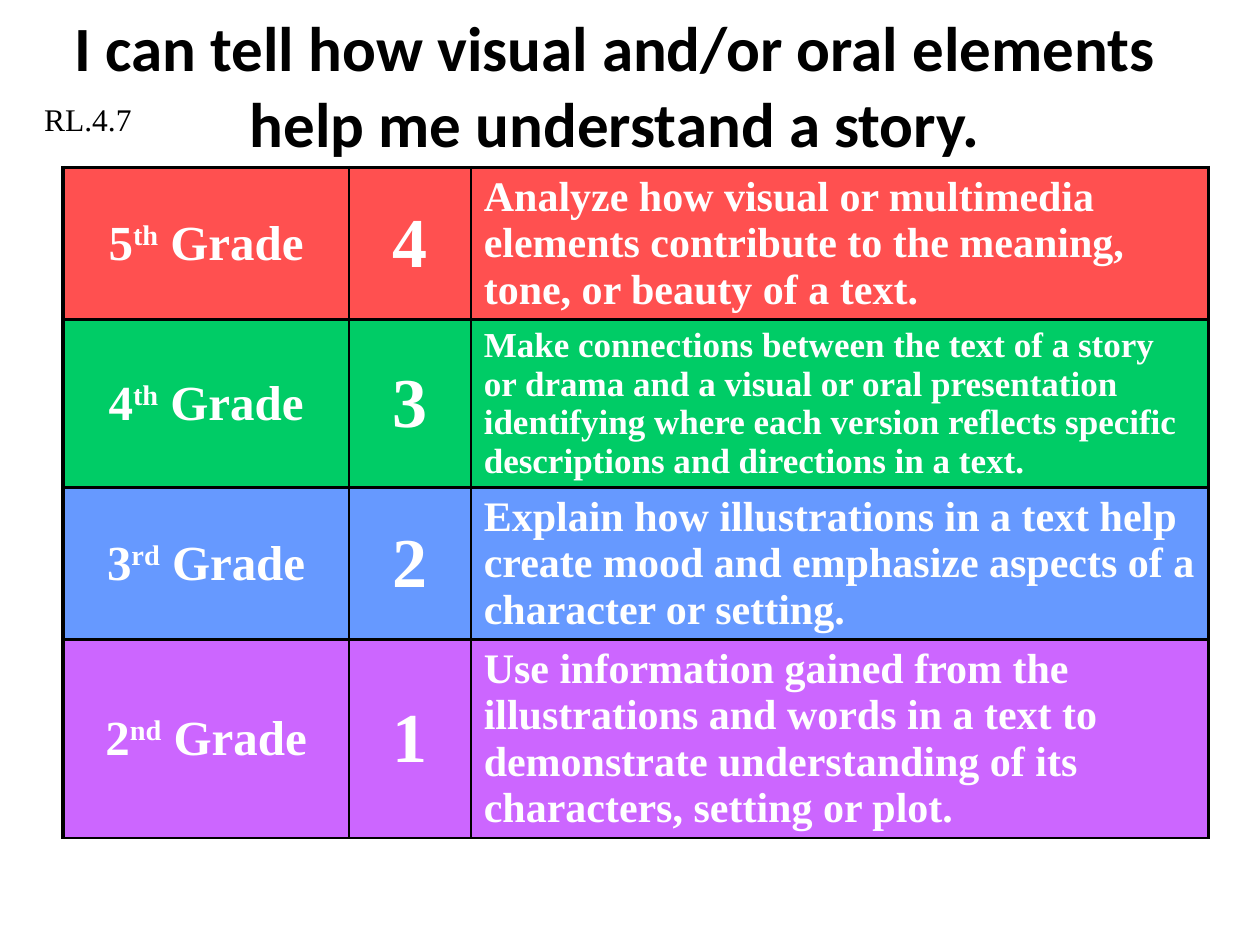
from typing import NamedTuple

from lxml import etree
from pptx import Presentation
from pptx.dml.color import RGBColor
from pptx.enum.text import MSO_ANCHOR, MSO_AUTO_SIZE, PP_ALIGN
from pptx.oxml.ns import qn
from pptx.util import Cm, Pt

CENTER, LEFT = PP_ALIGN.CENTER, PP_ALIGN.LEFT
MIDDLE = MSO_ANCHOR.MIDDLE
NO_FIT, GROW = MSO_AUTO_SIZE.NONE, MSO_AUTO_SIZE.SHAPE_TO_FIT_TEXT

SERIF, SANS = "Times New Roman", "Calibri"
COLORS = {
    "black": "000000",
    "white": "FFFFFF",
    "red": "FF5050",
    "green": "00CC66",
    "blue": "6699FF",
    "purple": "CC66FF",
}
COL_WIDTHS = (5.77, 2.46, 14.86)
OUTER, ROW_LINE, COL_LINE = 2.25, 1.5, 1


class Level(NamedTuple):
    grade: str
    suffix: str
    score: str
    goal: str
    color: str
    goal_size: int = 24
    height: float = 2.79


LEVELS = (
    Level("5", "th", "4",
          "Analyze how visual or multimedia elements contribute to the "
          "meaning, tone, or beauty of a text.", "red"),
    Level("4", "th", "3",
          "Make connections between the text of a story or drama and a visual "
          "or oral presentation identifying where each version reflects "
          "specific descriptions and directions in a text.", "green", 20, 3.3),
    Level("3", "rd", "2",
          "Explain how illustrations in a text help create mood and emphasize "
          "aspects of a character or setting.", "blue"),
    Level("2", "nd", "1",
          "Use information gained from the illustrations and words in a text "
          "to demonstrate understanding of its characters, setting or plot.",
          "purple"),
)


def rgb(name: str) -> RGBColor:
    return RGBColor.from_string(COLORS[name])


def format_runs(p, size: float, color: str, font: str = SERIF,
                bold: bool = True, align=LEFT) -> None:
    p.alignment = align
    for r in p.runs:
        r.font.name = font
        r.font.size = Pt(size)
        r.font.bold = bold
        r.font.color.rgb = rgb(color)


def set_borders(cell, widths: dict[str, float]) -> None:
    """Put line elements ahead of the fill, as the schema requires."""
    tc_pr = cell._tc.get_or_add_tcPr()
    for i, (side, width) in enumerate(widths.items()):
        ln = etree.Element(qn(f"a:ln{side}"), w=str(Pt(width)))
        fill = etree.SubElement(ln, qn("a:solidFill"))
        etree.SubElement(fill, qn("a:srgbClr"), val=COLORS["black"])
        tc_pr.insert(i, ln)


def fill_row(table, row: int, level: Level) -> None:
    table.rows[row].height = Cm(level.height)
    grade, score, goal = cells = table.rows[row].cells

    p = grade.text_frame.paragraphs[0]
    for text in (level.grade, level.suffix, " Grade"):
        p.add_run().text = text
    format_runs(p, 28, "white", align=CENTER)
    p.runs[1]._r.get_or_add_rPr().set("baseline", "30000")

    score.text_frame.text = level.score
    format_runs(score.text_frame.paragraphs[0], 40, "white", align=CENTER)
    goal.text_frame.text = level.goal
    format_runs(goal.text_frame.paragraphs[0], level.goal_size, "white")

    for col, cell in enumerate(cells):
        cell.vertical_anchor = MIDDLE
        cell.fill.solid()
        cell.fill.fore_color.rgb = rgb(level.color)
        set_borders(cell, {
            "L": OUTER if col == 0 else COL_LINE,
            "R": OUTER if col == len(COL_WIDTHS) - 1 else COL_LINE,
            "T": OUTER if row == 0 else ROW_LINE,
            "B": ROW_LINE,
        })


def add_title(s) -> None:
    sp = s.shapes.title
    sp.left, sp.top, sp.width, sp.height = Cm(0.43), Cm(0.43), Cm(23.93), Cm(2.54)
    tf = sp.text_frame
    tf.text = ("I can tell how visual and/or oral elements "
               "help me understand a story.")
    tf.auto_size = NO_FIT
    tf.vertical_anchor = MIDDLE
    format_runs(tf.paragraphs[0], 36, "black", SANS, align=CENTER)


def add_levels(s) -> None:
    frame = s.shapes.add_table(len(LEVELS), len(COL_WIDTHS),
                               Cm(1.27), Cm(3.38), Cm(23.09), Cm(11.67))
    table = frame.table
    table.first_row = table.horz_banding = False
    for column, width in zip(table.columns, COL_WIDTHS):
        column.width = Cm(width)
    for row, level in enumerate(LEVELS):
        fill_row(table, row, level)


def add_standard(s) -> None:
    sp = s.shapes.add_textbox(Cm(0.64), Cm(1.9), Cm(3.6), Cm(1.02))
    tf = sp.text_frame
    tf.word_wrap = True
    tf.auto_size = GROW
    tf.text = "RL.4.7"
    format_runs(tf.paragraphs[0], 18, "black", bold=False)


def main() -> None:
    prs = Presentation()
    prs.slide_width, prs.slide_height = Cm(25.4), Cm(19.05)
    s = prs.slides.add_slide(prs.slide_layouts.get_by_name("Title Only"))
    add_title(s)
    add_levels(s)
    add_standard(s)
    prs.save("out.pptx")


if __name__ == "__main__":
    main()
